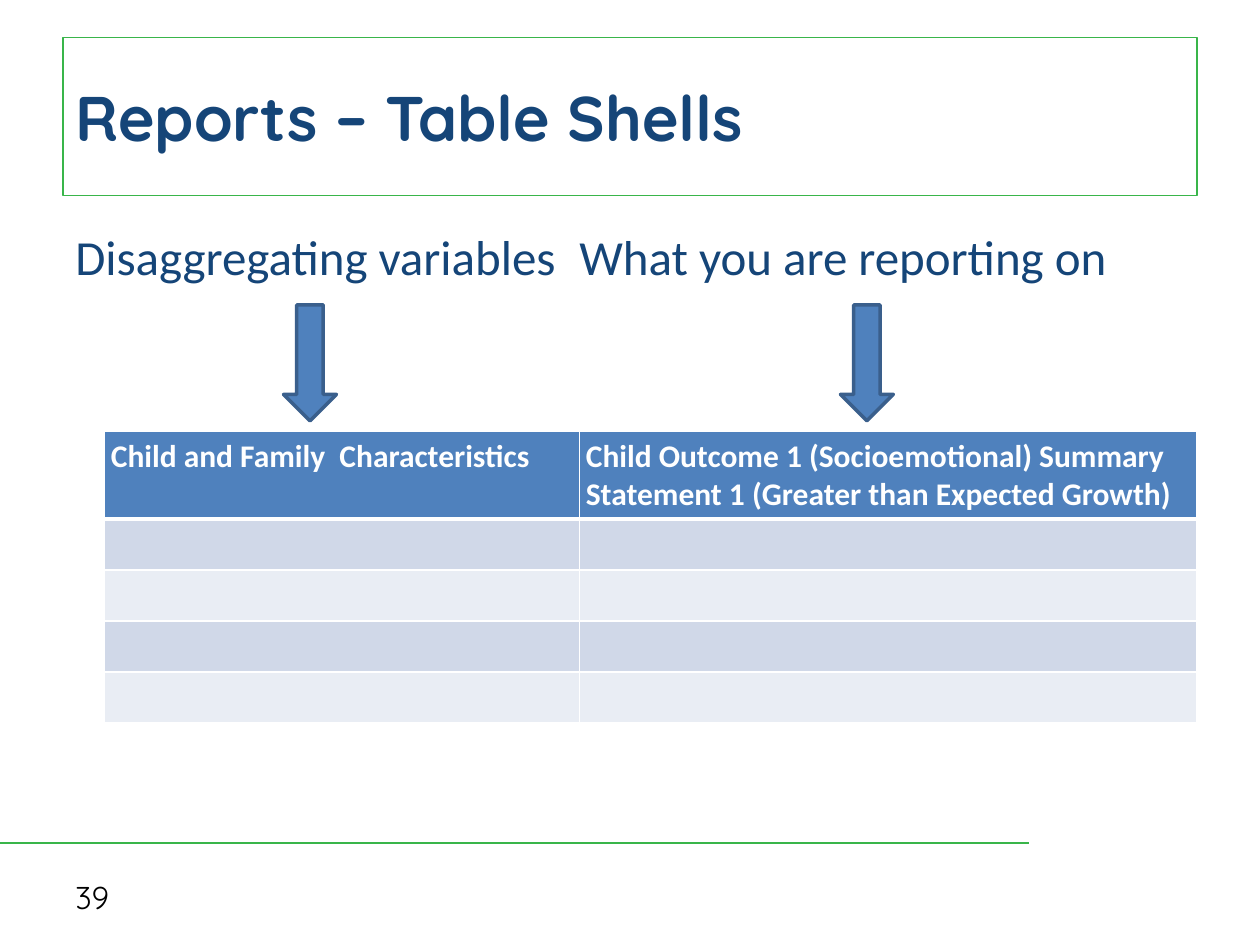
"""Build the "Reports – Table Shells" slide."""
import pptx
import pptx.dml.color
import pptx.enum.shapes
import pptx.enum.text
import pptx.oxml.ns
import pptx.util
import lxml.etree

RGBColor = pptx.dml.color.RGBColor
NAVY = RGBColor(0x15, 0x45, 0x78)
GREEN = RGBColor(0x39, 0xB5, 0x4A)
BLUE = RGBColor(0x4F, 0x81, 0xBD)
DARK_BLUE = RGBColor(0x3A, 0x5F, 0x8C)
BANDS = [RGBColor(0xD0, 0xD8, 0xE8), RGBColor(0xE9, 0xED, 0xF4)]
WHITE = RGBColor(0xFF, 0xFF, 0xFF)
BLACK = RGBColor(0, 0, 0)

Inches = pptx.util.Inches
Pt = pptx.util.Pt
qn = pptx.oxml.ns.qn
MIDDLE = pptx.enum.text.MSO_ANCHOR.MIDDLE
SHAPES = pptx.enum.shapes.MSO_SHAPE


def write(frame, text, font_name, size, color, bold=False):
    frame.word_wrap = True
    paragraph = frame.paragraphs[0]
    paragraph.text = text
    paragraph.alignment = pptx.enum.text.PP_ALIGN.LEFT
    paragraph.font.name = font_name
    paragraph.font.size = Pt(size)
    paragraph.font.bold = bold
    paragraph.font.color.rgb = color
    return paragraph


def add_border(cell, side, points):
    line = lxml.etree.SubElement(cell._tc.get_or_add_tcPr(), qn(f"a:ln{side}"), w=str(Pt(points)))
    fill = lxml.etree.SubElement(line, qn("a:solidFill"))
    lxml.etree.SubElement(fill, qn("a:srgbClr"), val=str(WHITE))


deck = pptx.Presentation()
deck.slide_width, deck.slide_height = Inches(10), Inches(7.5)
slide = deck.slides.add_slide(deck.slide_layouts[6])
margin = Inches(0.5)
content_width = deck.slide_width - 2 * margin

footer_rule = slide.shapes.add_connector(
    pptx.enum.shapes.MSO_CONNECTOR.STRAIGHT, 0, Inches(6.69), Inches(8.17), Inches(6.69))
footer_rule.line.color.rgb = GREEN
footer_rule.line.width = Pt(1.5)
lxml.etree.SubElement(footer_rule._element.spPr, qn("a:effectLst"))

page_number = slide.shapes.add_textbox(margin, Inches(6.92), Inches(2.33), Inches(0.4))
page_number.text_frame.vertical_anchor = MIDDLE
write(page_number.text_frame, "39", "Quicksand", 18, BLACK)

title = slide.shapes.add_shape(SHAPES.RECTANGLE, margin, Inches(0.3), content_width, Inches(1.25))
title.shadow.inherit = False
title.fill.background()
title.line.color.rgb = GREEN
title.line.width = Pt(0.75)
title.text_frame.vertical_anchor = MIDDLE
write(title.text_frame, "Reports – Table Shells", "Quicksand", 36, NAVY, True)

column_labels = slide.shapes.add_textbox(margin, Inches(1.75), content_width, Inches(1.33))
label_properties = column_labels.text_frame.paragraphs[0]._p.get_or_add_pPr()
tab_stops = lxml.etree.SubElement(label_properties, qn("a:tabLst"))
lxml.etree.SubElement(tab_stops, qn("a:tab"), pos=str(Inches(4)), algn="l")
write(column_labels.text_frame, "Disaggregating variables\tWhat you are reporting on",
      "Calibri", 28, NAVY)

headings = ["Child and Family  Characteristics",
            "Child Outcome 1 (Socioemotional) Summary Statement 1 (Greater than Expected Growth)"]
column_widths = [3.77, 4.9]
row_heights = [0.7] + 4 * [0.405]
table_shell = slide.shapes.add_table(
    len(row_heights), len(column_widths), Inches(0.83), Inches(3.42),
    Inches(sum(column_widths)), Inches(sum(row_heights))).table
for column, width in zip(table_shell.columns, column_widths):
    column.width = Inches(width)
for r, height in enumerate(row_heights):
    table_shell.rows[r].height = Inches(height)
    for c, heading in enumerate(headings):
        cell = table_shell.cell(r, c)
        cell.margin_left = cell.margin_right = Inches(0.05)
        cell.margin_top = cell.margin_bottom = Inches(0.05)
        for side, points in zip("LRTB", [1, 1, 3 if r == 1 else 1, 3 if r == 0 else 1]):
            add_border(cell, side, points)
        cell.fill.solid()
        cell.fill.fore_color.rgb = BANDS[(r - 1) % 2] if r else BLUE
        write(cell.text_frame, "" if r else heading, "Calibri", 18, WHITE, r == 0)

for arrow_left in [2.25, 6.67]:
    arrow = slide.shapes.add_shape(
        SHAPES.DOWN_ARROW, Inches(arrow_left), Inches(2.42), Inches(0.42), Inches(0.92))
    arrow.shadow.inherit = False
    arrow.fill.solid()
    arrow.fill.fore_color.rgb = BLUE
    arrow.line.color.rgb = DARK_BLUE
    arrow.line.width = Pt(2)

deck.save("out.pptx")
